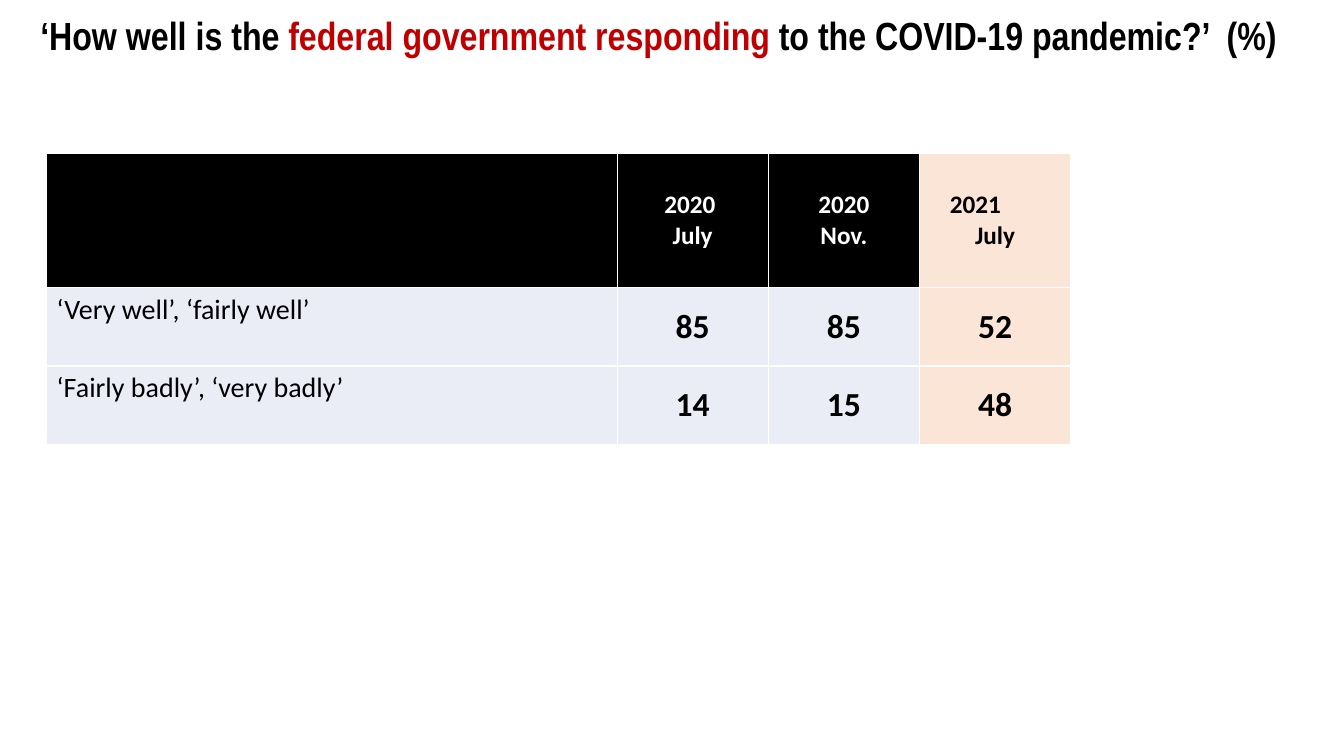
from dataclasses import dataclass

from pptx import Presentation
from pptx.dml.color import RGBColor
from pptx.enum.text import MSO_ANCHOR, MSO_AUTO_SIZE, PP_ALIGN
from pptx.util import Pt

LEFT, CENTER = PP_ALIGN.LEFT, PP_ALIGN.CENTER
TOP, MIDDLE = MSO_ANCHOR.TOP, MSO_ANCHOR.MIDDLE
NO_AUTOFIT = MSO_AUTO_SIZE.NONE
TITLE_ONLY = 5


@dataclass(frozen=True)
class Theme:
    title_font: str = "Arial Narrow"
    body_font: str = "Calibri"
    black: str = "000000"
    white: str = "FFFFFF"
    red: str = "C00000"
    row_fill: str = "EAEDF6"
    latest_fill: str = "FBE5D6"
    title_size: int = 28
    header_size: int = 18
    label_size: int = 20
    value_size: int = 24


THEME = Theme()

TITLE_RUNS = [
    ("‘How well is the ", THEME.black),
    ("federal government responding ", THEME.red),
    ("to the COVID-19 pandemic?’  (%)", THEME.black),
]
HEADERS = [("2020 ", "July"), ("2020", "Nov."), ("2021", "July")]
ANSWERS = [
    ("‘Very well’, ‘fairly well’", (85, 85, 52)),
    ("‘Fairly badly’, ‘very badly’", (14, 15, 48)),
]
COLUMN_WIDTHS = [407.5, 108, 108, 108]
ROW_HEIGHTS = [96, 56, 56]
LATEST = len(HEADERS)


def add_text(p, text, size, color=THEME.black, font=THEME.body_font,
             bold=True, align=CENTER):
    p.alignment = align
    r = p.add_run()
    r.text = text
    r.font.name = font
    r.font.size = Pt(size)
    r.font.bold = bold
    r.font.color.rgb = RGBColor.from_string(color)


def add_title(slide):
    sp = slide.shapes.title
    sp.left, sp.top, sp.width, sp.height = Pt(21.6), Pt(8.6), Pt(931), Pt(36.7)
    tf = sp.text_frame
    tf.word_wrap = True
    tf.auto_size = NO_AUTOFIT
    tf.vertical_anchor = MIDDLE
    p = tf.paragraphs[0]
    p.line_spacing = 0.9
    for text, color in TITLE_RUNS:
        add_text(p, text, THEME.title_size, color, THEME.title_font, align=LEFT)


def format_cell(cell, fill, anchor=MIDDLE):
    cell.fill.solid()
    cell.fill.fore_color.rgb = RGBColor.from_string(fill)
    cell.vertical_anchor = anchor
    return cell.text_frame


def fill_header(table):
    format_cell(table.cell(0, 0), THEME.black)
    for col, (year, month) in enumerate(HEADERS, 1):
        latest = col == LATEST
        cell = table.cell(0, col)
        tf = format_cell(cell, THEME.latest_fill if latest else THEME.black)
        color = THEME.black if latest else THEME.white
        p = tf.paragraphs[0]
        if latest:
            p._p.get_or_add_pPr().set("marL", str(Pt(14.5)))
        add_text(p, year, THEME.header_size, color, align=LEFT if latest else CENTER)
        add_text(tf.add_paragraph(), month, THEME.header_size, color)


def fill_answers(table):
    for row, (label, values) in enumerate(ANSWERS, 1):
        tf = format_cell(table.cell(row, 0), THEME.row_fill, TOP)
        add_text(tf.paragraphs[0], label, THEME.label_size, bold=False, align=LEFT)
        for col, value in enumerate(values, 1):
            fill = THEME.latest_fill if col == LATEST else THEME.row_fill
            tf = format_cell(table.cell(row, col), fill)
            add_text(tf.paragraphs[0], str(value), THEME.value_size)


def add_answer_table(slide):
    table = slide.shapes.add_table(
        len(ROW_HEIGHTS), len(COLUMN_WIDTHS), Pt(33.3), Pt(109.5),
        Pt(sum(COLUMN_WIDTHS)), Pt(sum(ROW_HEIGHTS))).table
    for column, width in zip(table.columns, COLUMN_WIDTHS):
        column.width = Pt(width)
    for row, height in zip(table.rows, ROW_HEIGHTS):
        row.height = Pt(height)
    fill_header(table)
    fill_answers(table)


def main():
    prs = Presentation()
    prs.slide_width, prs.slide_height = Pt(960), Pt(540)
    slide = prs.slides.add_slide(prs.slide_layouts[TITLE_ONLY])
    add_title(slide)
    add_answer_table(slide)
    prs.save("out.pptx")


if __name__ == "__main__":
    main()
